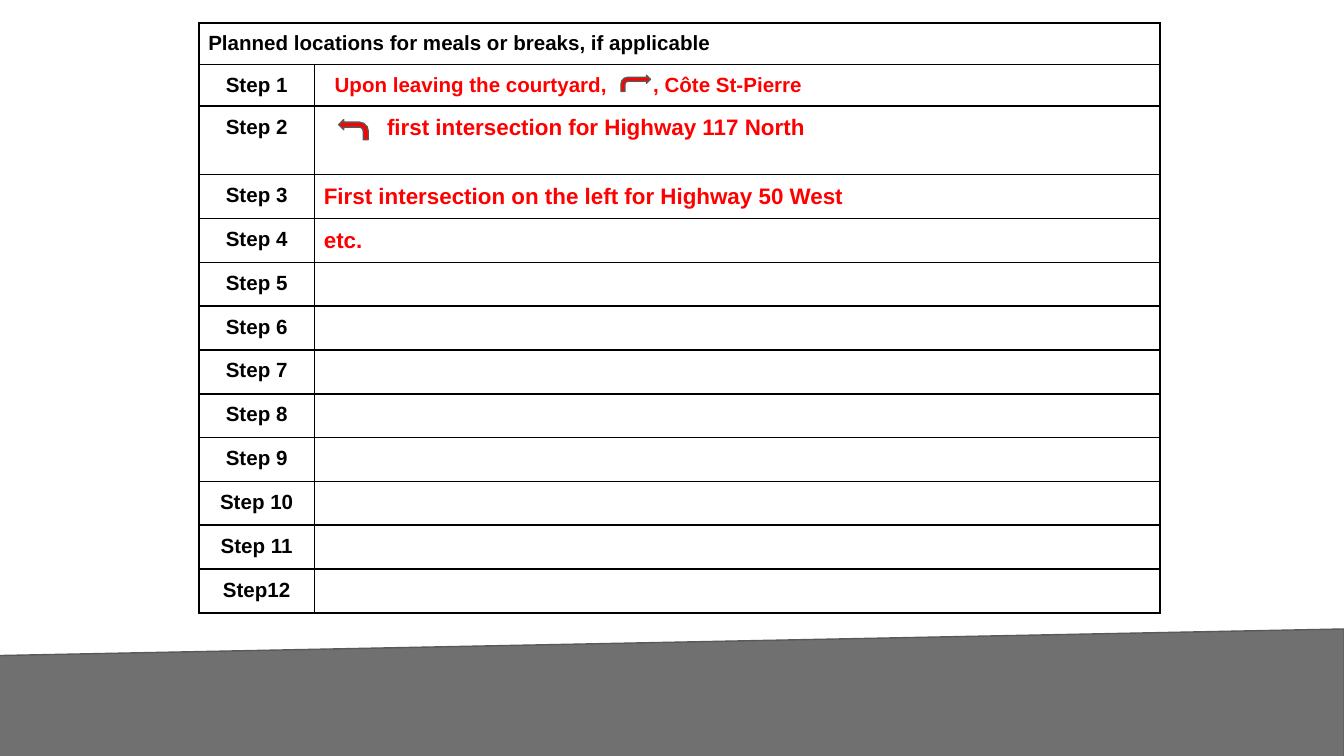
from dataclasses import dataclass

from lxml.etree import SubElement
from pptx import Presentation
from pptx.dml.color import RGBColor
from pptx.enum.shapes import MSO_SHAPE
from pptx.enum.text import MSO_ANCHOR, PP_ALIGN
from pptx.oxml.ns import qn
from pptx.util import Inches, Pt


@dataclass(frozen=True)
class Theme:
    font: str = "Arial"
    ink: str = "000000"
    route: str = "FF0000"
    outline: str = "595959"
    label_size: int = 11
    route_size: int = 12
    border: float = 1
    outline_width: float = 0.75


THEME = Theme()
HEADING = "Planned locations for meals or breaks, if applicable"
LABELS = [f"Step {n}" for n in range(1, 12)] + ["Step12"]
ROUTES = [
    "Upon leaving the courtyard,\t, Côte St-Pierre",
    "first intersection for Highway 117 North",
    "First intersection on the left for Highway 50 West",
    "etc.",
]
PAD = 0.07


def add_outlined(s, kind, box, color, alpha=None):
    sp = s.shapes.add_shape(kind, *map(Inches, box))
    sp.shadow.inherit = False
    sp.fill.solid()
    sp.fill.fore_color.rgb = RGBColor.from_string(color)
    if alpha is not None:
        clr = sp._element.spPr.find(qn("a:solidFill"))[0]
        SubElement(clr, qn("a:alpha"), val=str(alpha * 1000))
    sp.line.color.rgb = RGBColor.from_string(THEME.outline)
    sp.line.width = Pt(THEME.outline_width)
    return sp


def add_turn(s, box, left=False):
    sp = add_outlined(s, MSO_SHAPE.BENT_ARROW, box, THEME.route)
    sp.adjustments[3] = 0.44
    if left:
        sp._element.spPr.xfrm.set("flipH", "1")


def style_cell(cell):
    tc_pr = cell._tc.get_or_add_tcPr()
    for side in ("lnL", "lnR", "lnT", "lnB"):
        ln = SubElement(tc_pr, qn(f"a:{side}"), w=str(Pt(THEME.border)))
        fill = SubElement(ln, qn("a:solidFill"))
        SubElement(fill, qn("a:srgbClr"), val=THEME.ink)
    cell.fill.background()
    cell.margin_left = cell.margin_right = Inches(PAD)
    cell.margin_top = cell.margin_bottom = Inches(PAD)


def write_cell(cell, text, color, size, align=PP_ALIGN.LEFT):
    p = cell.text_frame.paragraphs[0]
    p.text = text
    p.alignment = align
    for r in p.runs:
        r.font.name = THEME.font
        r.font.size = Pt(size)
        r.font.bold = True
        r.font.color.rgb = RGBColor.from_string(color)
    end = p._p.get_or_add_endParaRPr()
    end.set("sz", str(size * 100))
    SubElement(end, qn("a:latin"), typeface=THEME.font)


def add_tab_stop(cell, position):
    p_pr = cell.text_frame.paragraphs[0]._p.get_or_add_pPr()
    tabs = SubElement(p_pr, qn("a:tabLst"))
    SubElement(tabs, qn("a:tab"), pos=str(Inches(position)), algn="l")


def add_itinerary(s):
    heights = [0.31, 0.31, 0.51] + [3.26 / 10] * 10
    frame = s.shapes.add_table(len(heights), 2, Inches(1.48), Inches(0.17),
                               Inches(7.15), Inches(sum(heights)))
    table = frame.table
    table.first_row = table.horz_banding = False
    for column, width in zip(table.columns, (0.86, 6.29)):
        column.width = Inches(width)
    for row, height in zip(table.rows, heights):
        row.height = Inches(height)
        for cell in row.cells:
            style_cell(cell)

    heading = table.cell(0, 0)
    heading.merge(table.cell(0, 1))
    write_cell(heading, HEADING, THEME.ink, THEME.label_size)

    routes = ROUTES + [""] * (len(LABELS) - len(ROUTES))
    for i, (label, route) in enumerate(zip(LABELS, routes), 1):
        size = THEME.route_size if 1 < i <= len(ROUTES) else THEME.label_size
        write_cell(table.cell(i, 0), label, THEME.ink, THEME.label_size,
                   PP_ALIGN.CENTER)
        write_cell(table.cell(i, 1), route, THEME.route, size)

    first, second = table.cell(1, 1), table.cell(2, 1)
    for cell in (table.cell(1, 0), first):
        cell.vertical_anchor = MSO_ANCHOR.MIDDLE
    first.margin_left = Inches(0.15)
    add_tab_stop(first, 2.37)
    second.margin_left = Inches(0.54)


def main():
    prs = Presentation()
    prs.slide_width, prs.slide_height = Inches(10), Inches(10 * 9 / 16)
    s = prs.slides.add_slide(prs.slide_layouts[6])
    add_outlined(s, MSO_SHAPE.FLOWCHART_MANUAL_INPUT,
                 (-0.02, 4.68, 10.02, 0.99), THEME.ink, alpha=56)
    add_itinerary(s)
    add_turn(s, (4.62, 0.56, 0.22, 0.12))
    add_turn(s, (2.52, 0.89, 0.22, 0.15), left=True)
    prs.save("out.pptx")


if __name__ == "__main__":
    main()
